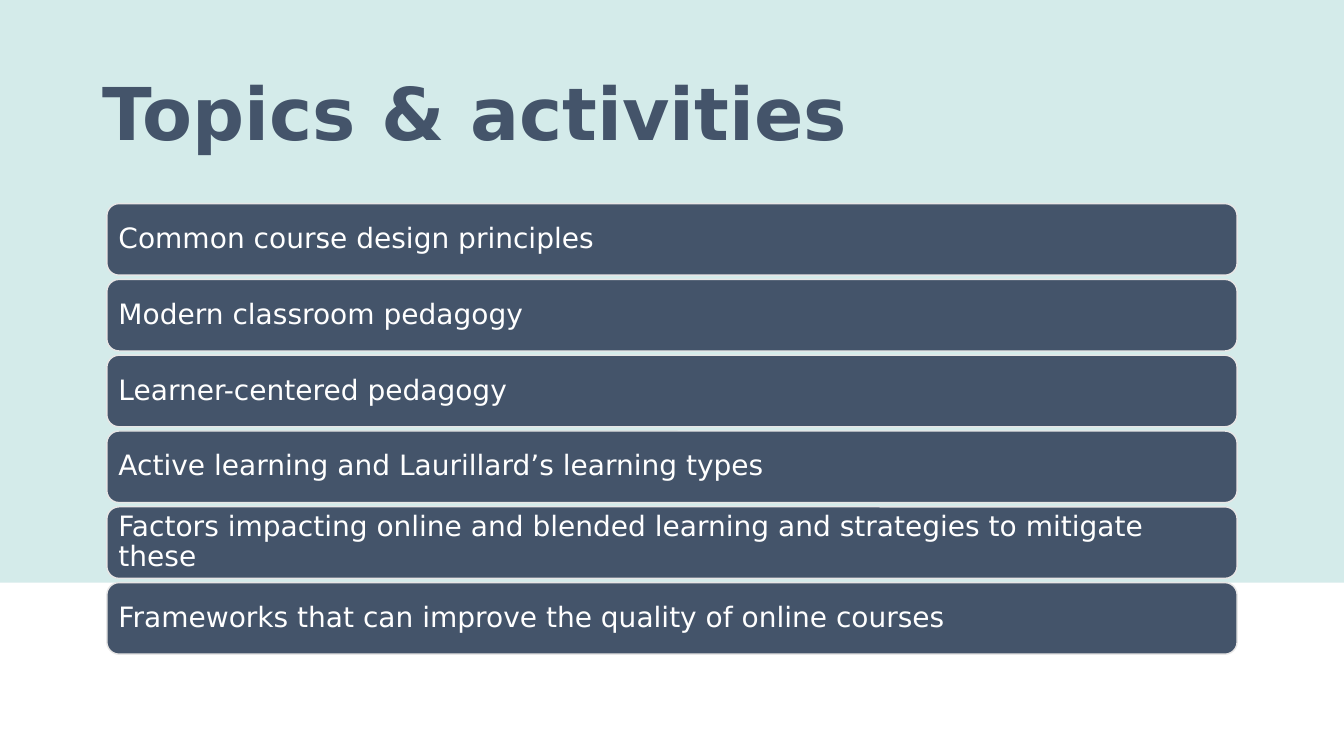
import pptx
import pptx.util
import pptx.dml.color
import pptx.enum.shapes
import pptx.enum.text

Inches = pptx.util.Inches
Pt = pptx.util.Pt
SHAPES = pptx.enum.shapes.MSO_SHAPE
MIDDLE = pptx.enum.text.MSO_ANCHOR.MIDDLE

FONT = "DejaVu Sans"
COLOURS = {
    name: pptx.dml.color.RGBColor.from_string(value)
    for name, value in {
        "backdrop": "D4EBEA",
        "slate": "44546A",
        "outline": "E7E6E6",
        "white": "FFFFFF",
    }.items()
}
TOPICS = [
    "Common course design principles",
    "Modern classroom pedagogy",
    "Learner-centered pedagogy",
    "Active learning and Laurillard’s learning types",
    "Factors impacting online and blended learning and strategies to mitigate these",
    "Frameworks that can improve the quality of online courses",
]
BAR_LEFT, BAR_TOP, BAR_WIDTH, BAR_HEIGHT = 1.06, 2.02, 11.21, 0.71
LAST_BAR_TOP = 5.78
BAR_PITCH = (LAST_BAR_TOP - BAR_TOP) / (len(TOPICS) - 1)


def add_shape(kind, left, top, width, height, colour):
    shape = slide.shapes.add_shape(
        kind, Inches(left), Inches(top), Inches(width), Inches(height)
    )
    shape.shadow.inherit = False
    shape.fill.solid()
    shape.fill.fore_color.rgb = COLOURS[colour]
    shape.line.fill.background()
    return shape


def write_text(frame, text, size, colour, bold=False):
    """Fill the frame with one left-aligned, vertically centred paragraph."""
    frame.word_wrap = True
    frame.auto_size = pptx.enum.text.MSO_AUTO_SIZE.NONE
    frame.vertical_anchor = MIDDLE
    paragraph = frame.paragraphs[0]
    paragraph.alignment = pptx.enum.text.PP_ALIGN.LEFT
    paragraph.line_spacing = 0.9
    run = paragraph.add_run()
    run.text = text
    run.font.name = FONT
    run.font.size = Pt(size)
    run.font.bold = bold
    run.font.color.rgb = COLOURS[colour]


presentation = pptx.Presentation()
presentation.slide_width = Inches(13.33)
presentation.slide_height = Inches(7.5)
slide = presentation.slides.add_slide(presentation.slide_layouts.get_by_name("Title Only"))

# Backdrop, placed behind the title
backdrop = add_shape(SHAPES.RECTANGLE, 0, -0.01, 13.33, 5.79, "backdrop")
title = slide.shapes.title
title.element.addprevious(backdrop.element)

title.left, title.top = Inches(0.92), Inches(0.61)
title.width, title.height = Inches(11.5), Inches(1.1)
write_text(title.text_frame, "Topics & activities", 52, "slate", bold=True)

# One bar per topic
for row, topic in enumerate(TOPICS):
    bar = add_shape(
        SHAPES.ROUNDED_RECTANGLE,
        BAR_LEFT, BAR_TOP + row * BAR_PITCH, BAR_WIDTH, BAR_HEIGHT,
        "slate",
    )
    bar.adjustments[0] = 0.17
    bar.line.color.rgb = COLOURS["outline"]
    bar.line.width = Pt(1)
    frame = bar.text_frame
    frame.margin_left = frame.margin_right = Inches(0.08)
    frame.margin_top = frame.margin_bottom = Inches(0.08)
    write_text(frame, topic, 20, "white")

presentation.save("out.pptx")
